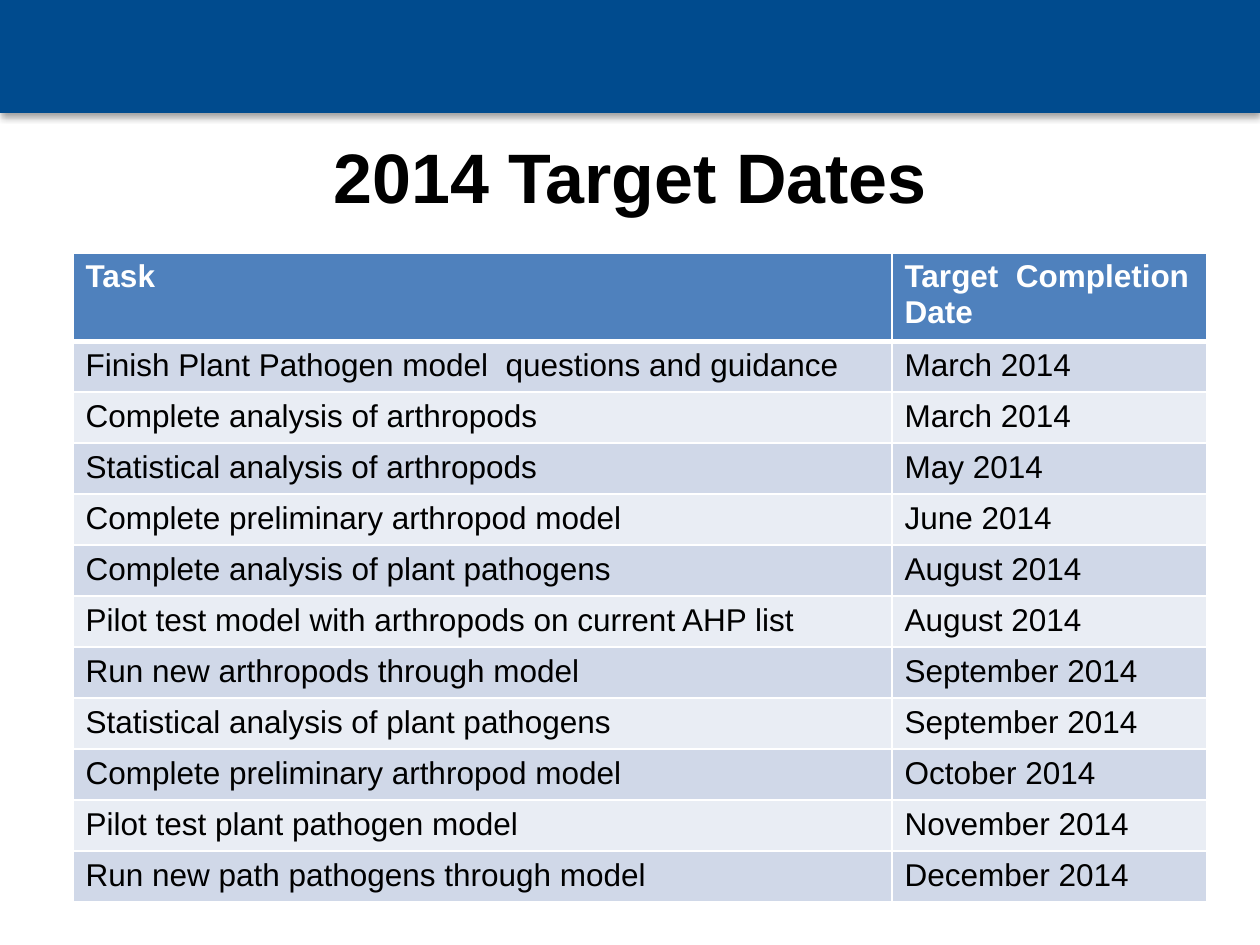
from lxml.etree import SubElement
from pptx import Presentation
from pptx.dml.color import RGBColor
from pptx.enum.shapes import MSO_SHAPE
from pptx.enum.text import MSO_ANCHOR, PP_ALIGN
from pptx.oxml import parse_xml
from pptx.oxml.ns import nsdecls, qn
from pptx.util import Inches, Pt

BLACK = RGBColor(0x00, 0x00, 0x00)
WHITE = RGBColor(0xFF, 0xFF, 0xFF)
BANNER_BLUE = RGBColor(0x00, 0x4B, 0x8E)
HEADER_BLUE = RGBColor(0x4F, 0x81, 0xBD)
BANDS = (RGBColor(0xD0, 0xD8, 0xE8), RGBColor(0xE9, 0xED, 0xF4))

TITLE_FONT = {"name": "Arial", "size": Pt(40), "bold": True}
HEADER_FONT = {"name": "Arial", "size": Pt(18), "bold": True}
BODY_FONT = {"name": "Arial", "size": Pt(18), "bold": False}

SCHEDULE = [
    ("Task", "Target  Completion Date"),
    ("Finish Plant Pathogen model  questions and guidance", "March 2014"),
    ("Complete analysis of arthropods", "March 2014"),
    ("Statistical analysis of arthropods", "May 2014"),
    ("Complete preliminary arthropod model", "June 2014"),
    ("Complete analysis of plant pathogens", "August 2014"),
    ("Pilot test model with arthropods on current AHP list", "August 2014"),
    ("Run new arthropods through model", "September 2014"),
    ("Statistical analysis of plant pathogens", "September 2014"),
    ("Complete preliminary arthropod model", "October 2014"),
    ("Pilot test plant pathogen model", "November 2014"),
    ("Run new path pathogens through model", "December 2014"),
]


def px(length):
    return Inches(length / 126)


def format_font(font, values, color):
    for attribute, value in values.items():
        setattr(font, attribute, value)
    font.color.rgb = color


def add_banner(slide, left, top, width, height):
    banner = slide.shapes.add_shape(
        MSO_SHAPE.RECTANGLE, px(left), px(top), px(width), px(height)
    )
    banner.fill.solid()
    banner.fill.fore_color.rgb = BANNER_BLUE
    banner.line.fill.background()
    banner.element.spPr.append(parse_xml(
        f'<a:effectLst {nsdecls("a")}>'
        f'<a:outerShdw blurRad="{Pt(4)}" dist="{Pt(2)}" dir="5400000" rotWithShape="0">'
        '<a:srgbClr val="000000"><a:alpha val="36000"/></a:srgbClr>'
        '</a:outerShdw></a:effectLst>'
    ))


def add_title(slide, left, top, width, height):
    title = slide.shapes.add_textbox(px(left), px(top), px(width), px(height))
    frame = title.text_frame
    frame.word_wrap = True
    frame.vertical_anchor = MSO_ANCHOR.MIDDLE
    heading = frame.paragraphs[0]
    heading.alignment = PP_ALIGN.CENTER
    run = heading.add_run()
    run.text = "2014 Target Dates"
    format_font(run.font, TITLE_FONT, BLACK)


def add_borders(cell, widths):
    properties = cell._tc.get_or_add_tcPr()
    for side, width in widths.items():
        border = SubElement(properties, qn(f"a:ln{side}"), w=str(Pt(width)))
        fill = SubElement(border, qn("a:solidFill"))
        SubElement(fill, qn("a:srgbClr"), val=str(WHITE))


def add_schedule(slide, left, top, width, header_height, row_height):
    height = header_height + row_height * (len(SCHEDULE) - 1)
    schedule = slide.shapes.add_table(
        len(SCHEDULE), 2, px(left), px(top), px(width), px(height)
    ).table
    date_width = 315
    for column, column_width in zip(schedule.columns, (width - date_width, date_width)):
        column.width = px(column_width)
    for index, entries in enumerate(SCHEDULE):
        is_header = index == 0
        schedule.rows[index].height = px(header_height if is_header else row_height)
        borders = {"L": 1, "R": 1, "T": 3 if index == 1 else 1, "B": 3 if is_header else 1}
        for cell, entry in zip(schedule.rows[index].cells, entries):
            add_borders(cell, borders)
            cell.fill.solid()
            cell.fill.fore_color.rgb = HEADER_BLUE if is_header else BANDS[(index - 1) % 2]
            run = cell.text_frame.paragraphs[0].add_run()
            run.text = entry
            format_font(
                run.font,
                HEADER_FONT if is_header else BODY_FONT,
                WHITE if is_header else BLACK,
            )


def main():
    presentation = Presentation()
    presentation.slide_width = px(1260)
    presentation.slide_height = px(945)
    slide = presentation.slides.add_slide(presentation.slide_layouts[6])
    add_banner(slide, 0, 0, 1260, 113)
    add_title(slide, 63, 97, 1134, 158)
    add_schedule(slide, 73, 253, 1134, 82, 51)
    presentation.save("out.pptx")


if __name__ == "__main__":
    main()
